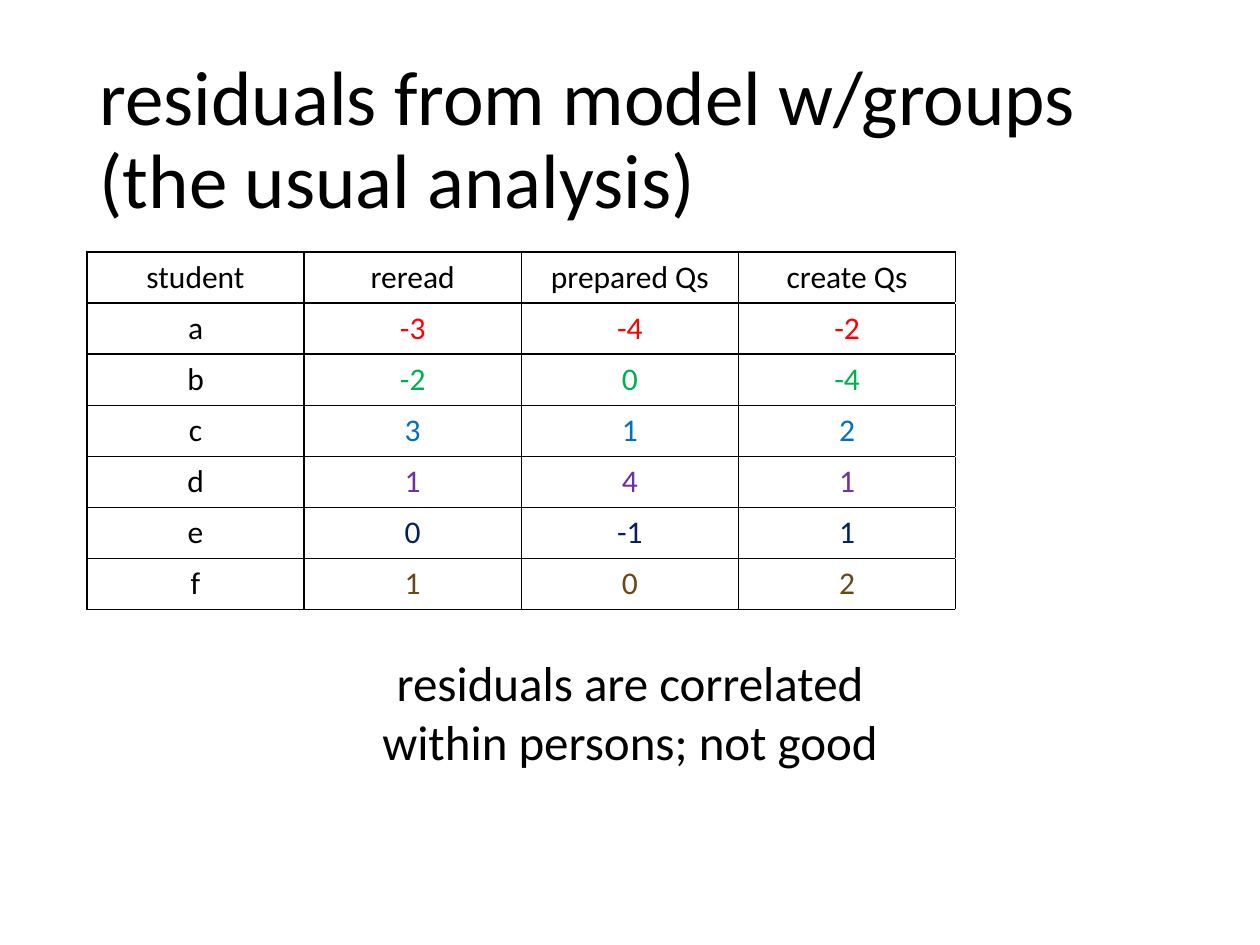
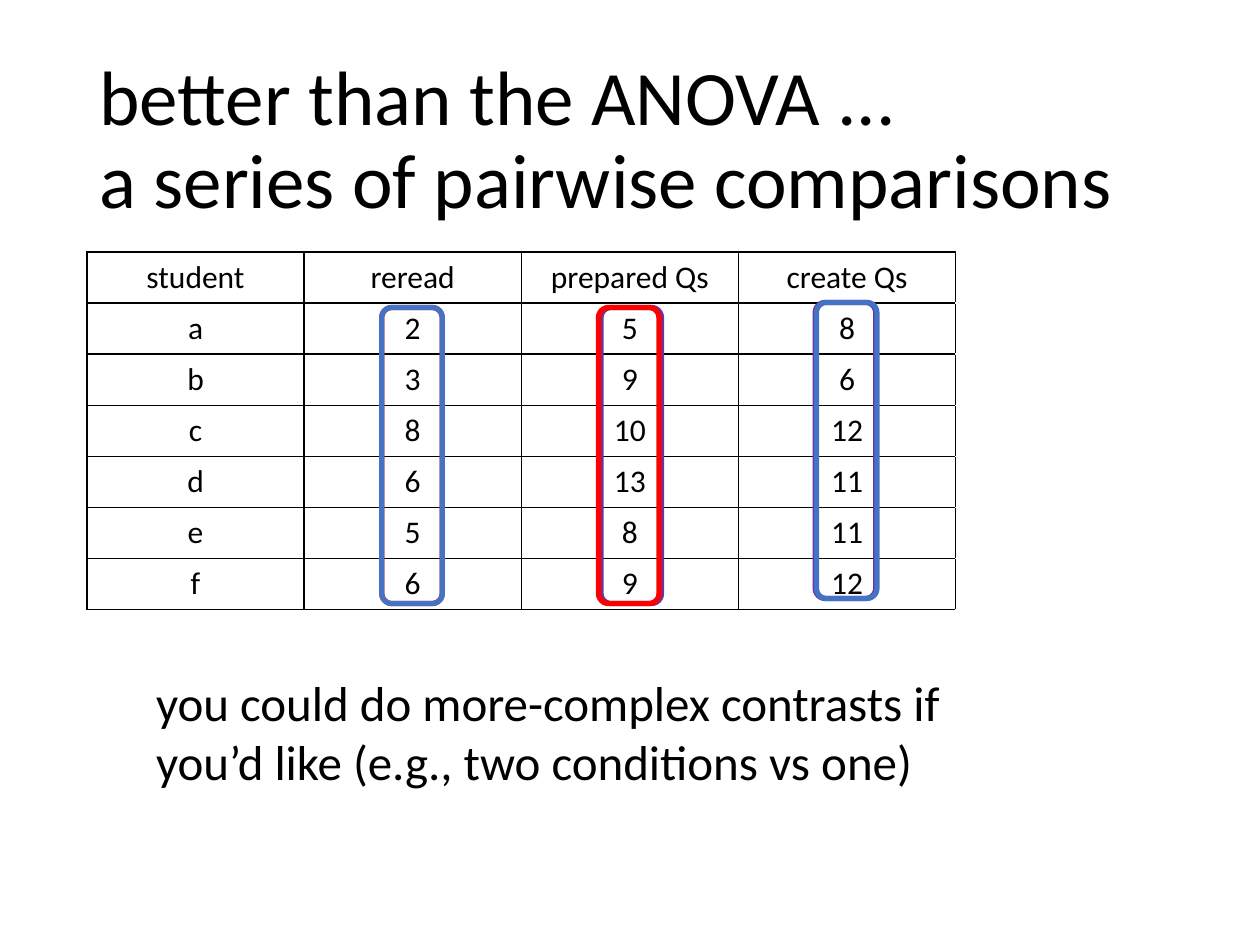
from lxml import etree
from pptx import Presentation
from pptx.dml.color import RGBColor
from pptx.enum.shapes import MSO_SHAPE
from pptx.enum.text import MSO_ANCHOR, MSO_AUTO_SIZE, PP_ALIGN
from pptx.oxml.ns import qn
from pptx.util import Inches, Pt

ROUND_RECT = MSO_SHAPE.ROUNDED_RECTANGLE
MIDDLE = MSO_ANCHOR.MIDDLE
NO_FIT, GROW = MSO_AUTO_SIZE.NONE, MSO_AUTO_SIZE.SHAPE_TO_FIT_TEXT
LEFT, CENTER = PP_ALIGN.LEFT, PP_ALIGN.CENTER

BLACK = RGBColor(0x00, 0x00, 0x00)
RED = RGBColor(0xFF, 0x00, 0x00)
GREEN = RGBColor(0x00, 0xB0, 0x50)
BLUE = RGBColor(0x00, 0x70, 0xC0)
PURPLE = RGBColor(0x70, 0x30, 0xA0)
NAVY = RGBColor(0x00, 0x20, 0x60)
BROWN = RGBColor(0x6A, 0x48, 0x16)
STEEL = RGBColor(0x44, 0x72, 0xC4)

FONT = "Calibri"
TITLE_ONLY = 5
TITLE_BOX = (0.69, 0.4, 8.62, 1.45)
TABLE_BOX = (0.69, 2, 8.62, 2.84)
COLUMNS = 5  # the last column is left open
HEADER = ("student", "reread", "prepared Qs", "create Qs")

RESIDUALS = [("a", -3, -4, -2), ("b", -2, 0, -4), ("c", 3, 1, 2),
             ("d", 1, 4, 1), ("e", 0, -1, 1), ("f", 1, 0, 2)]
STUDENT_COLORS = [RED, GREEN, BLUE, PURPLE, NAVY, BROWN]
SCORES = [("a", 2, 5, 8), ("b", 3, 9, 6), ("c", 8, 10, 12),
          ("d", 6, 13, 11), ("e", 5, 8, 11), ("f", 6, 9, 12)]

# Outlines around the compared columns: left, top, colour
OUTLINE_SIZE = (0.48, 2.35)
OUTLINES = [(3.03, 2.44, RED), (3.03, 2.44, STEEL), (6.47, 2.4, PURPLE),
            (4.77, 2.44, PURPLE), (4.75, 2.44, RED), (6.48, 2.4, STEEL)]


def inches(box):
    return [Inches(v) for v in box]


def style(p, size, color=BLACK, align=LEFT):
    p.alignment = align
    p.font.name = FONT
    p.font.size = Pt(size)
    p.font.color.rgb = color


def add_titled_slide(prs, title):
    slide = prs.slides.add_slide(prs.slide_layouts[TITLE_ONLY])
    sp = slide.shapes.title
    sp.left, sp.top, sp.width, sp.height = inches(TITLE_BOX)
    tf = sp.text_frame
    tf.text = title
    tf.auto_size = NO_FIT
    tf.vertical_anchor = MIDDLE
    p = tf.paragraphs[0]
    style(p, 44)
    p.line_spacing = 0.9
    return slide


def set_borders(cell, sides):
    tc_pr = cell._tc.get_or_add_tcPr()
    for side in sides:
        ln = etree.SubElement(tc_pr, qn(f"a:ln{side}"), w=str(Pt(1)))
        fill = etree.SubElement(ln, qn("a:solidFill"))
        etree.SubElement(fill, qn("a:srgbClr"), val=str(BLACK))


def add_student_table(slide, box, rows, colors):
    left, top, width, height = inches(box)
    lines = [HEADER, *rows]
    table = slide.shapes.add_table(len(lines), COLUMNS, left, top,
                                   width, height).table
    table.first_row = table.horz_banding = False
    for r, (line, color) in enumerate(zip(lines, [BLACK, *colors])):
        for c in range(COLUMNS):
            cell = table.cell(r, c)
            p = cell.text_frame.paragraphs[0]
            if c < len(line):
                p.text = str(line[c])
                set_borders(cell, "LRTB")
            else:
                set_borders(cell, "L")
            style(p, 18, color if c else BLACK, CENTER)
            cell.fill.background()


def add_note(slide, box, text, align, wrap):
    tf = slide.shapes.add_textbox(*inches(box)).text_frame
    tf.word_wrap = wrap
    tf.auto_size = GROW
    tf.text = text
    for p in tf.paragraphs:
        style(p, 28, align=align)


def add_outline(slide, box, color):
    sp = slide.shapes.add_shape(ROUND_RECT, *inches(box))
    sp.shadow.inherit = False
    sp.fill.background()
    sp.line.color.rgb = color
    sp.line.width = Pt(3)


def build_residuals(prs):
    slide = add_titled_slide(
        prs, "residuals from model w/groups\v(the usual analysis)")
    add_student_table(slide, TABLE_BOX, RESIDUALS, STUDENT_COLORS)
    add_note(slide, (2.91, 5.13, 4.18, 1.04),
             "residuals are correlated\nwithin persons; not good",
             CENTER, wrap=False)


def build_comparisons(prs):
    slide = add_titled_slide(
        prs, "better than the ANOVA ...\va series of pairwise comparisons")
    add_student_table(slide, TABLE_BOX, SCORES, [BLACK] * len(SCORES))
    for left, top, color in OUTLINES:
        add_outline(slide, (left, top, *OUTLINE_SIZE), color)
    add_note(slide, (1.14, 5.29, 7.13, 1.04),
             "you could do more-complex contrasts if you’d like "
             "(e.g., two conditions vs one)", LEFT, wrap=True)


def main():
    prs = Presentation()
    prs.slide_width, prs.slide_height = Inches(10), Inches(7.5)
    build_residuals(prs)
    build_comparisons(prs)
    prs.save("out.pptx")


if __name__ == "__main__":
    main()
